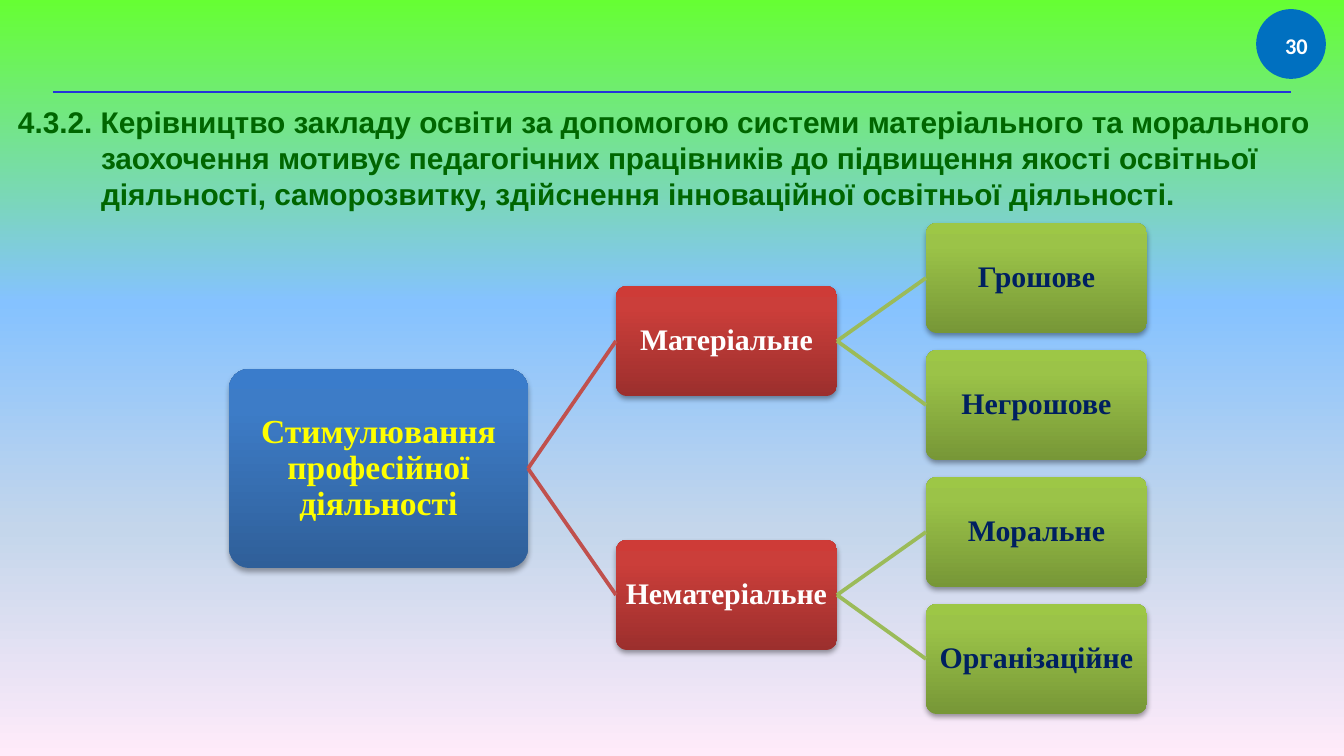
from lxml import etree
from pptx import Presentation, util as u
from pptx.dml.color import RGBColor
from pptx.enum import shapes, text
from pptx.oxml.ns import qn

PX = 914400 / 134.4

COLORS = {
    "rule": "2435DA", "badge": "0070C0", "heading": "006600", "white": "FFFFFF",
    "yellow": "FFFF00", "navy": "002060", "red line": "C0504D", "green line": "9BBB59",
    "shadow": "000000",
}
BACKGROUND = [(0, "66FF33"), (40, "85C2FF"), (70, "C4D6EB"), (100, "FFEBFA")]

HEADING = [
    "4.3.2. Керівництво закладу освіти за допомогою системи матеріального та морального",
    "заохочення мотивує педагогічних працівників до підвищення якості освітньої",
    "діяльності, саморозвитку, здійснення інноваційної освітньої діяльності.",
]
HEADING_INDENT = 83

TREE = ("Стимулювання професійної діяльності", [
    ("Матеріальне", [("Грошове", []), ("Негрошове", [])]),
    ("Нематеріальне", [("Моральне", []), ("Організаційне", [])]),
])
FIRST_LEAF_CENTER, LEAF_PITCH = 278, 127
LEVELS = [
    {"left": 229, "width": 299, "height": 199, "size": 18, "color": "yellow",
     "stops": [(0, "2F5F99"), (80, "3D7CC7"), (100, "3A7CCB")],
     "shadow": (35, 1.8), "branch": "red line"},
    {"left": 616, "width": 221, "height": 110, "size": 16, "color": "white",
     "stops": [(0, "9C2F2D"), (80, "CB3E3A"), (100, "CE3B37")],
     "shadow": (38, 1.6), "branch": "green line"},
    {"left": 926, "width": 221, "height": 110, "size": 16, "color": "navy",
     "stops": [(0, "779737"), (80, "9BC348"), (100, "9DC746")],
     "shadow": (38, 1.6), "branch": None},
]


def px(*lengths):
    return [u.Emu(round(length * PX)) for length in lengths]


def rgb(name):
    return RGBColor.from_string(COLORS[name])


def set_gradient(fill, element, stops, angle):
    """Angle is counter-clockwise, as python-pptx counts it."""
    fill.gradient()
    fill.gradient_angle = angle
    stop_list = next(element.iter(qn("a:gsLst")))
    for default_stop in list(stop_list):
        stop_list.remove(default_stop)
    for percent, color in stops:
        stop = etree.SubElement(stop_list, qn("a:gs"), pos=str(percent * 1000))
        etree.SubElement(stop, qn("a:srgbClr"), val=color)


def add_shadow(shape, opacity, distance):
    shape.shadow.inherit = False
    effects = shape._element.spPr.find(qn("a:effectLst"))
    shadow = etree.SubElement(
        effects, qn("a:outerShdw"), blurRad=str(u.Pt(3.1)), dist=str(u.Pt(distance)),
        dir="5400000", rotWithShape="0")
    color = etree.SubElement(shadow, qn("a:srgbClr"), val=COLORS["shadow"])
    etree.SubElement(color, qn("a:alpha"), val=str(opacity * 1000))


def format_frame(frame, margins, anchor, wrap=True):
    left, top, right, bottom = px(*margins)
    values = {"margin_left": left, "margin_top": top, "margin_right": right,
              "margin_bottom": bottom, "vertical_anchor": anchor, "word_wrap": wrap,
              "auto_size": text.MSO_AUTO_SIZE.NONE}
    for name, value in values.items():
        setattr(frame, name, value)


def write(paragraph, words, font, size, color, align, spacing=1.0):
    paragraph.alignment = align
    paragraph.line_spacing = spacing
    run = paragraph.add_run()
    run.text = words
    for name, value in {"name": font, "size": u.Pt(size), "bold": True}.items():
        setattr(run.font, name, value)
    run.font.color.rgb = rgb(color)


def add_line(slide, color, width, ends=(0, 0, 0, 0)):
    line = slide.shapes.add_connector(shapes.MSO_CONNECTOR.STRAIGHT, *px(*ends))
    line.line.color.rgb = rgb(color)
    line.line.width = u.Pt(width)
    etree.SubElement(line._element.spPr, qn("a:effectLst"))
    return line


def add_badge(slide, number):
    badge = slide.shapes.add_shape(shapes.MSO_SHAPE.OVAL, *px(1258, 11, 66, 66))
    badge.shadow.inherit = False
    badge.fill.solid()
    badge.fill.fore_color.rgb = rgb("badge")
    badge.line.color.rgb = rgb("badge")
    badge.line.width = u.Pt(2)
    format_frame(badge.text_frame, (11, 3, 0, 0), text.MSO_ANCHOR.MIDDLE, wrap=False)
    write(badge.text_frame.paragraphs[0], number, "Calibri", 12, "white",
          text.PP_ALIGN.CENTER)


def set_heading(title):
    title.left, title.top, title.width, title.height = px(5, 97, 1339, 122)
    frame = title.text_frame
    format_frame(frame, (13, 7, 13, 7), text.MSO_ANCHOR.TOP)
    for index, words in enumerate(HEADING):
        paragraph = frame.add_paragraph() if index else frame.paragraphs[0]
        write(paragraph, words, "Arial", 16, "heading", text.PP_ALIGN.LEFT)
        if index:
            indent, = px(HEADING_INDENT)
            paragraph._p.get_or_add_pPr().set("marL", str(indent))


def add_box(slide, words, level, center):
    box = slide.shapes.add_shape(
        shapes.MSO_SHAPE.ROUNDED_RECTANGLE,
        *px(level["left"], center - level["height"] // 2, level["width"], level["height"]))
    box.adjustments[0] = 0.1
    set_gradient(box.fill, box._element, level["stops"], 90)
    box.line.fill.background()
    add_shadow(box, *level["shadow"])
    format_frame(box.text_frame, (1, 1, 1, 1), text.MSO_ANCHOR.MIDDLE)
    write(box.text_frame.paragraphs[0], words, "Times New Roman", level["size"],
          level["color"], text.PP_ALIGN.CENTER, 0.9)
    return box


def add_tree(slide, node, leaf_centers, depth=0):
    """Draw a node midway between its children; return its box and centre."""
    words, children = node
    level = LEVELS[depth]
    branches = [add_tree(slide, child, leaf_centers, depth + 1) for child in children]
    if branches:
        center = (branches[0][1] + branches[-1][1]) // 2
    else:
        center = next(leaf_centers)
    box = add_box(slide, words, level, center)
    for child_box, _ in branches:
        branch = add_line(slide, level["branch"], 2)
        branch.begin_connect(box, 3)
        branch.end_connect(child_box, 1)
    return box, center


def main():
    deck = Presentation()
    deck.slide_width, deck.slide_height = px(1344, 756)
    slide = deck.slides.add_slide(deck.slide_layouts[5])
    set_gradient(slide.background.fill, slide.element, BACKGROUND, 270)
    add_line(slide, "rule", 0.75, (53, 92, 1291, 92))
    add_badge(slide, "30")
    set_heading(slide.shapes.title)
    leaf_centers = (FIRST_LEAF_CENTER + LEAF_PITCH * row for row in range(4))
    add_tree(slide, TREE, leaf_centers)
    deck.save("out.pptx")


if __name__ == "__main__":
    main()
